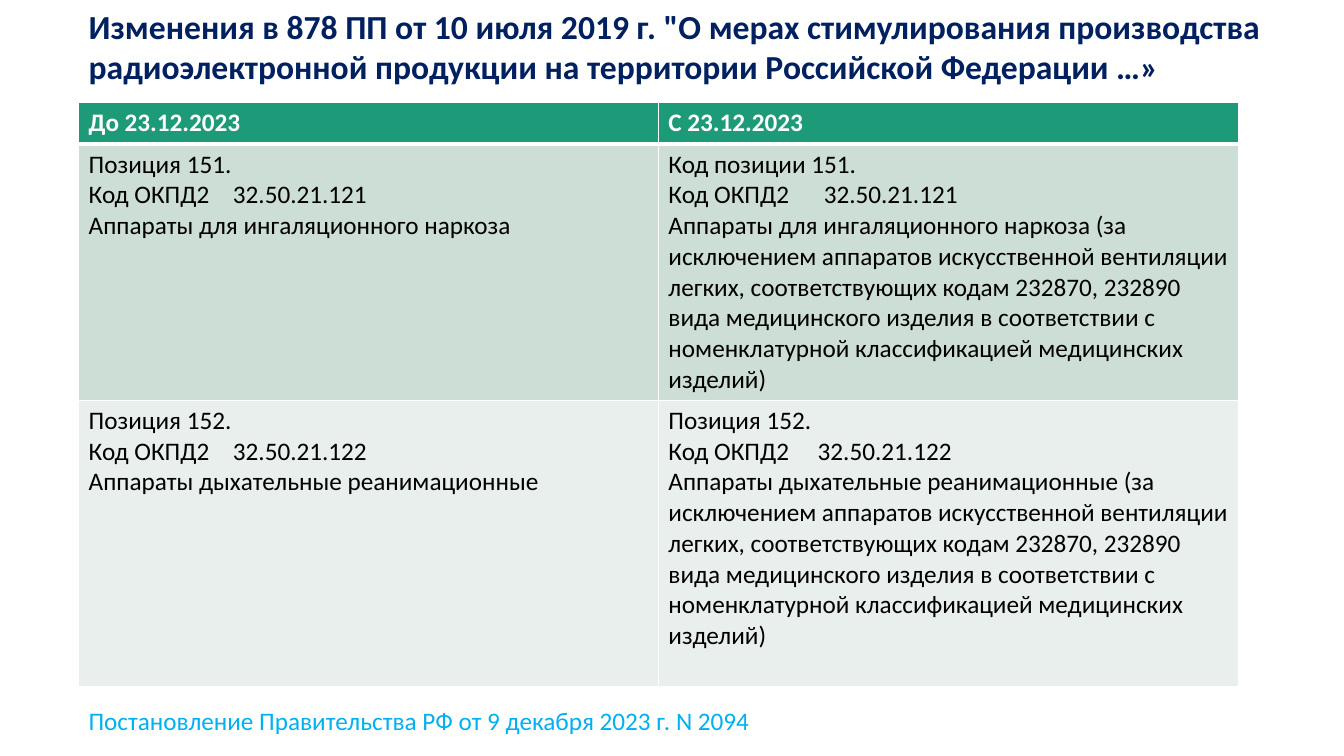
from dataclasses import dataclass

from lxml.etree import SubElement
from pptx import Presentation
from pptx.dml.color import RGBColor
from pptx.enum.text import MSO_ANCHOR, MSO_AUTO_SIZE, PP_ALIGN
from pptx.oxml.ns import qn
from pptx.util import Inches, Length, Pt

COLORS = {
    "title": "002060", "source": "00B0F0", "white": "FFFFFF", "text": "000000",
    "header": "1D9A78", "band_dark": "CDDED6", "band_light": "E8EFEC",
}
FONT = "Calibri"
WIDTH, HEIGHT = 13.33, 7.5
LEFT = 0.78
COLUMN = 5.75
TABLE_TOP = 1.02
EXCEPTION = (
    " (за исключением аппаратов искусственной вентиляции легких, "
    "соответствующих кодам 232870, 232890 вида медицинского изделия в соответствии "
    "с номенклатурной классификацией медицинских изделий)"
)


@dataclass(frozen=True)
class Entry:
    lines: tuple[str, ...]
    code_tab: float = 0  # inches from the text edge to the code


@dataclass(frozen=True)
class Row:
    entries: tuple[Entry, Entry]
    height: float
    fill: str
    color: str = "text"
    bold: bool = False
    edges: tuple[float, ...] = (1, 1, 1, 1)  # left, right, top, bottom


def position(heading: str, code: str, device: str, code_tab: float) -> Entry:
    return Entry((heading, f"Код ОКПД2\t{code}", device), code_tab)


INHALATION = "Аппараты для ингаляционного наркоза"
BREATHING = "Аппараты дыхательные реанимационные"
ROWS = (
    Row((Entry(("До 23.12.2023",)), Entry(("С 23.12.2023",))),
        0.41, "header", "white", True, (1, 1, 1, 3)),
    Row((position("Позиция 151.", "32.50.21.121", INHALATION, 1.43),
         position("Код позиции 151.", "32.50.21.121", INHALATION + EXCEPTION, 1.54)),
        2.54, "band_dark", edges=(1, 1, 3, 1)),
    Row((position("Позиция 152.", "32.50.21.122", BREATHING, 1.43),
         position("Позиция 152.", "32.50.21.122", BREATHING + EXCEPTION, 1.48)),
        2.84, "band_light"),
)


def rgb(name: str) -> RGBColor:
    return RGBColor.from_string(COLORS[name])


def box(left: float, top: float, width: float, height: float) -> tuple[Length, ...]:
    return tuple(Inches(n) for n in (left, top, width, height))


def write(frame, lines: tuple[str, ...], size: float, color: str, bold: bool = False) -> None:
    frame.text = "\n".join(lines)
    frame.word_wrap = True
    for paragraph in frame.paragraphs:
        paragraph.alignment = PP_ALIGN.LEFT
        font = paragraph.font
        font.name, font.size, font.bold = FONT, Pt(size), bold
        font.color.rgb = rgb(color)


def add_tab_stop(paragraph, inches: float) -> None:
    props = paragraph._p.get_or_add_pPr()
    tabs = SubElement(props, qn("a:tabLst"))
    SubElement(tabs, qn("a:tab"), pos=str(Inches(inches)), algn="l")
    props.insert(0, tabs)


def add_borders(cell, widths: tuple[float, ...]) -> None:
    props = cell._tc.get_or_add_tcPr()
    for side, width in zip("LRTB", widths):
        line = SubElement(props, qn(f"a:ln{side}"), w=str(Pt(width)))
        fill = SubElement(line, qn("a:solidFill"))
        SubElement(fill, qn("a:srgbClr"), val=COLORS["white"])


def fill_cell(cell, entry: Entry, row: Row) -> None:
    write(cell.text_frame, entry.lines, 18, row.color, row.bold)
    if entry.code_tab:
        add_tab_stop(cell.text_frame.paragraphs[1], entry.code_tab)
    add_borders(cell, row.edges)
    cell.fill.solid()
    cell.fill.fore_color.rgb = rgb(row.fill)


def add_comparison(slide) -> None:
    columns = len(ROWS[0].entries)
    area = box(LEFT, TABLE_TOP, columns * COLUMN, sum(row.height for row in ROWS))
    table = slide.shapes.add_table(len(ROWS), columns, *area).table
    for r, row in enumerate(ROWS):
        table.rows[r].height = Inches(row.height)
        for c, entry in enumerate(row.entries):
            fill_cell(table.cell(r, c), entry, row)


def add_title(slide) -> None:
    title = slide.shapes.title
    title.left, title.top, title.width, title.height = box(LEFT, 0.01, WIDTH - LEFT - 0.03, 0.91)
    write(title.text_frame, (
        'Изменения в 878 ПП от 10 июля 2019 г. "О мерах стимулирования производства '
        "радиоэлектронной продукции на территории Российской Федерации …»",
    ), 24, "title", True)
    title.text_frame.auto_size = MSO_AUTO_SIZE.NONE
    title.text_frame.vertical_anchor = MSO_ANCHOR.TOP


def add_source(slide) -> None:
    source = slide.shapes.add_textbox(*box(LEFT, 6.95, 12.34, 0.4))
    write(source.text_frame, ("Постановление Правительства РФ от 9 декабря 2023 г. N 2094",),
          18, "source")


def main() -> None:
    deck = Presentation()
    deck.slide_width, deck.slide_height = Inches(WIDTH), Inches(HEIGHT)
    slide = deck.slides.add_slide(deck.slide_layouts.get_by_name("Title Only"))
    add_comparison(slide)
    add_title(slide)
    add_source(slide)
    deck.save("out.pptx")


if __name__ == "__main__":
    main()
